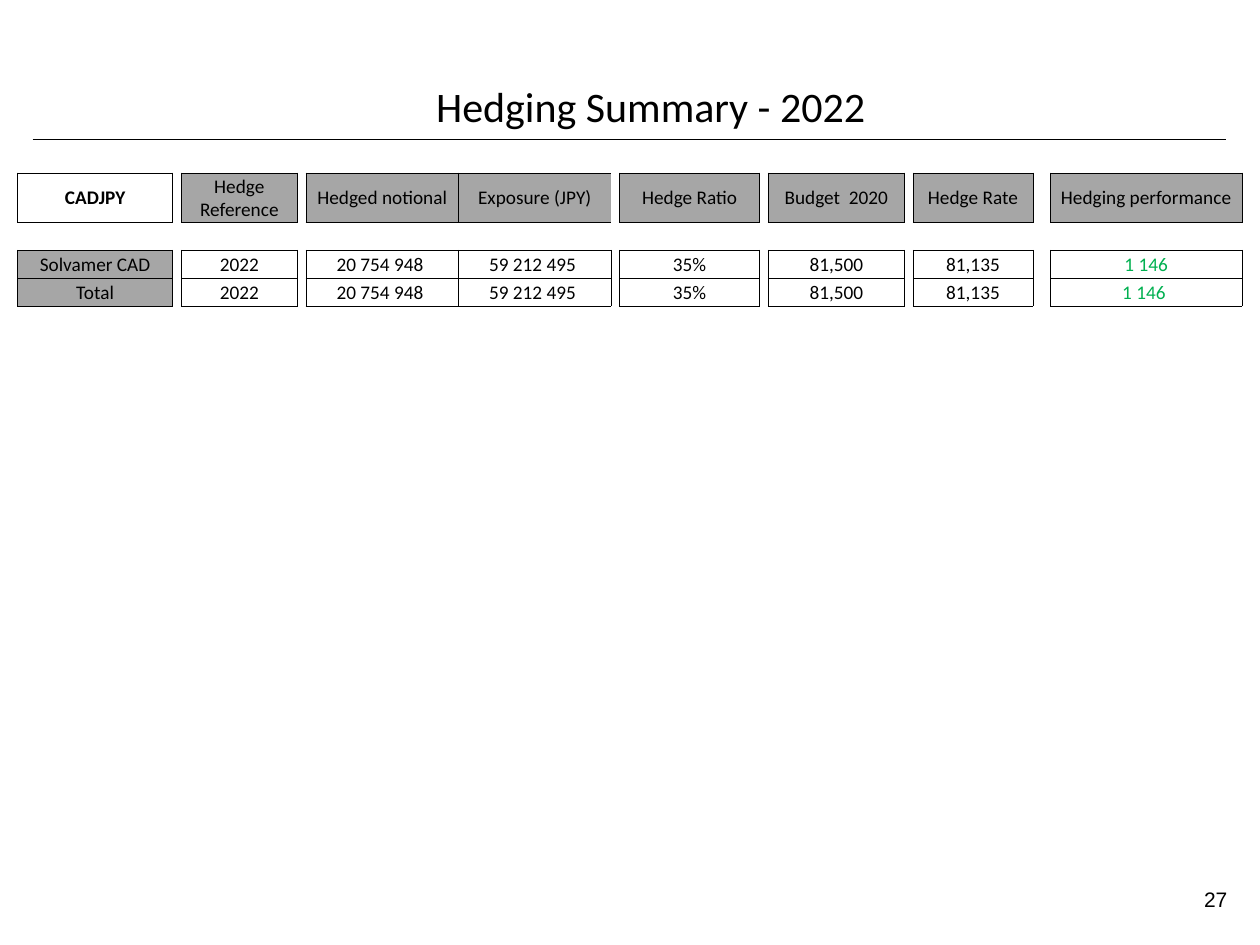
from lxml import etree
from pptx import Presentation, util as u
from pptx.dml.color import RGBColor
from pptx.enum import shapes, text
from pptx.oxml import ns

BLACK = RGBColor(0x00, 0x00, 0x00)
WHITE = RGBColor(0xFF, 0xFF, 0xFF)
GREY = RGBColor(0xA6, 0xA6, 0xA6)
GREEN = RGBColor(0x00, 0xB0, 0x50)

SLIDE_WIDTH, SLIDE_HEIGHT = u.Inches(10), u.Inches(7.5)
NO_GRID_STYLE = "{2D5ABB26-0587-4C30-8999-92F81FD0307C}"
BORDER = u.Pt(0.5)
SIDES = ("L", "R", "T", "B")

COLUMN_SHARES = (123, 7, 92, 7, 121, 121, 7, 111, 7, 108, 7, 95, 7, 7, 152)
ROW_SHARES = (39, 22, 22, 22)
CONTENT_COLUMNS = [i for i, share in enumerate(COLUMN_SHARES) if share > 7]
NOTIONAL, EXPOSURE = 4, 5
PERFORMANCE = CONTENT_COLUMNS[-1]
HEADER, SPACER = 0, 1
FIGURES = ("2022", "20 754 948 ", "59 212 495 ", "35%", "81,500", "81,135")
HEDGES = {
    HEADER: ("CADJPY", "Hedge Reference", "Hedged notional", "Exposure (JPY)",
             "Hedge Ratio", "Budget  2020", "Hedge Rate", "Hedging performance"),
    2: ("Solvamer CAD", *FIGURES, "1 146"),
    3: ("Total", *FIGURES, "1 146 "),
}

CELL_FORMAT = {"margin_left": u.Inches(0.01), "margin_right": u.Inches(0.01),
               "margin_top": u.Inches(0.01), "margin_bottom": 0,
               "vertical_anchor": text.MSO_ANCHOR.MIDDLE}
CELL_FONT = {"name": "Calibri", "size": u.Pt(11)}
TITLE_FONT = {"name": "Calibri", "size": u.Pt(24)}
NUMBER_FONT = {"name": "Arial", "size": u.Pt(12)}


def share_box(left, top, width, height):
    """Turn shares of the slide's size into a box."""
    return (round(left * SLIDE_WIDTH), round(top * SLIDE_HEIGHT),
            round(width * SLIDE_WIDTH), round(height * SLIDE_HEIGHT))


def apply_format(target, values):
    """Set each attribute named in a dict of format values."""
    for attribute, value in values.items():
        setattr(target, attribute, value)


def write(paragraph, wording, font, color=BLACK, alignment=text.PP_ALIGN.CENTER):
    """Put one formatted run in a paragraph."""
    paragraph.alignment = alignment
    run = paragraph.add_run()
    run.text = wording
    apply_format(run.font, font)
    run.font.color.rgb = color


def add_label(slide, box, wording, font, alignment, anchor):
    """Place a line of text in its box."""
    frame = slide.shapes.add_textbox(*box).text_frame
    apply_format(frame, {"word_wrap": True, "vertical_anchor": anchor})
    write(frame.paragraphs[0], wording, font, alignment=alignment)


def add_title_rule(slide, box):
    """Draw the rule along the top edge of its box."""
    left, top, width, _ = box
    rule = slide.shapes.add_connector(shapes.MSO_CONNECTOR.STRAIGHT,
                                      left, top, left + width, top)
    rule.line.color.rgb = BLACK
    rule.line.width = u.Pt(0.75)
    etree.SubElement(rule._element.spPr, ns.qn("a:effectLst"))


def add_borders(cell, sides):
    """Draw thin black borders on the given sides of a cell."""
    properties = cell._tc.get_or_add_tcPr()
    for position, side in enumerate(sides):
        edge = etree.Element(ns.qn(f"a:ln{side}"), w=str(BORDER))
        fill = etree.SubElement(edge, ns.qn("a:solidFill"))
        etree.SubElement(fill, ns.qn("a:srgbClr"), val=str(BLACK))
        properties.insert(position, edge)


def border_sides(row, column):
    """Name the bordered sides of a content cell."""
    open_sides = {NOTIONAL: "R", EXPOSURE: "LR" if row == HEADER else "L"}
    return [side for side in SIDES if side not in open_sides.get(column, "")]


def fill_content(cell, row, column, wording):
    """Write, colour and border one content cell."""
    shaded = (row == HEADER) != (column == 0)
    cell.fill.solid()
    cell.fill.fore_color.rgb = GREY if shaded else WHITE
    color = GREEN if column == PERFORMANCE and row != HEADER else BLACK
    bold = row == HEADER and column == 0
    write(cell.text_frame.paragraphs[0], wording, {**CELL_FONT, "bold": bold}, color)
    add_borders(cell, border_sides(row, column))


def add_hedge_table(slide, box):
    """Build the hedge table within its box."""
    _, _, width, height = box
    table = slide.shapes.add_table(len(ROW_SHARES), len(COLUMN_SHARES), *box).table
    apply_format(table, {"first_row": False, "horz_banding": False})
    table._tbl.tblPr.find(ns.qn("a:tableStyleId")).text = NO_GRID_STYLE
    for column, share in zip(table.columns, COLUMN_SHARES):
        column.width = round(width * share / sum(COLUMN_SHARES))
    for row, share in zip(table.rows, ROW_SHARES):
        row.height = round(height * share / sum(ROW_SHARES))
    for cell in table.iter_cells():
        apply_format(cell, CELL_FORMAT)
        cell.fill.background()
        etree.SubElement(cell.text_frame.paragraphs[0]._p,
                         ns.qn("a:endParaRPr"), sz="1100")
    for row, wordings in HEDGES.items():
        for column, wording in zip(CONTENT_COLUMNS, wordings):
            fill_content(table.cell(row, column), row, column, wording)
    for column in CONTENT_COLUMNS:
        add_borders(table.cell(SPACER, column), ("T", "B"))


def main():
    """Build and save the hedging summary."""
    deck = Presentation()
    apply_format(deck, {"slide_width": SLIDE_WIDTH, "slide_height": SLIDE_HEIGHT})
    slide = deck.slides.add_slide(deck.slide_layouts[6])
    add_title_rule(slide, share_box(0.026, 0.148, 0.947, 0))
    add_label(slide, share_box(0.751, 0.932, 0.233, 0.048), "27", NUMBER_FONT,
              text.PP_ALIGN.RIGHT, text.MSO_ANCHOR.TOP)
    add_label(slide, share_box(0.246, 0.016, 0.541, 0.129), "Hedging Summary - 2022",
              TITLE_FONT, text.PP_ALIGN.CENTER, text.MSO_ANCHOR.BOTTOM)
    add_hedge_table(slide, share_box(0.014, 0.183, 0.972, 0.141))
    deck.save("out.pptx")


if __name__ == "__main__":
    main()
